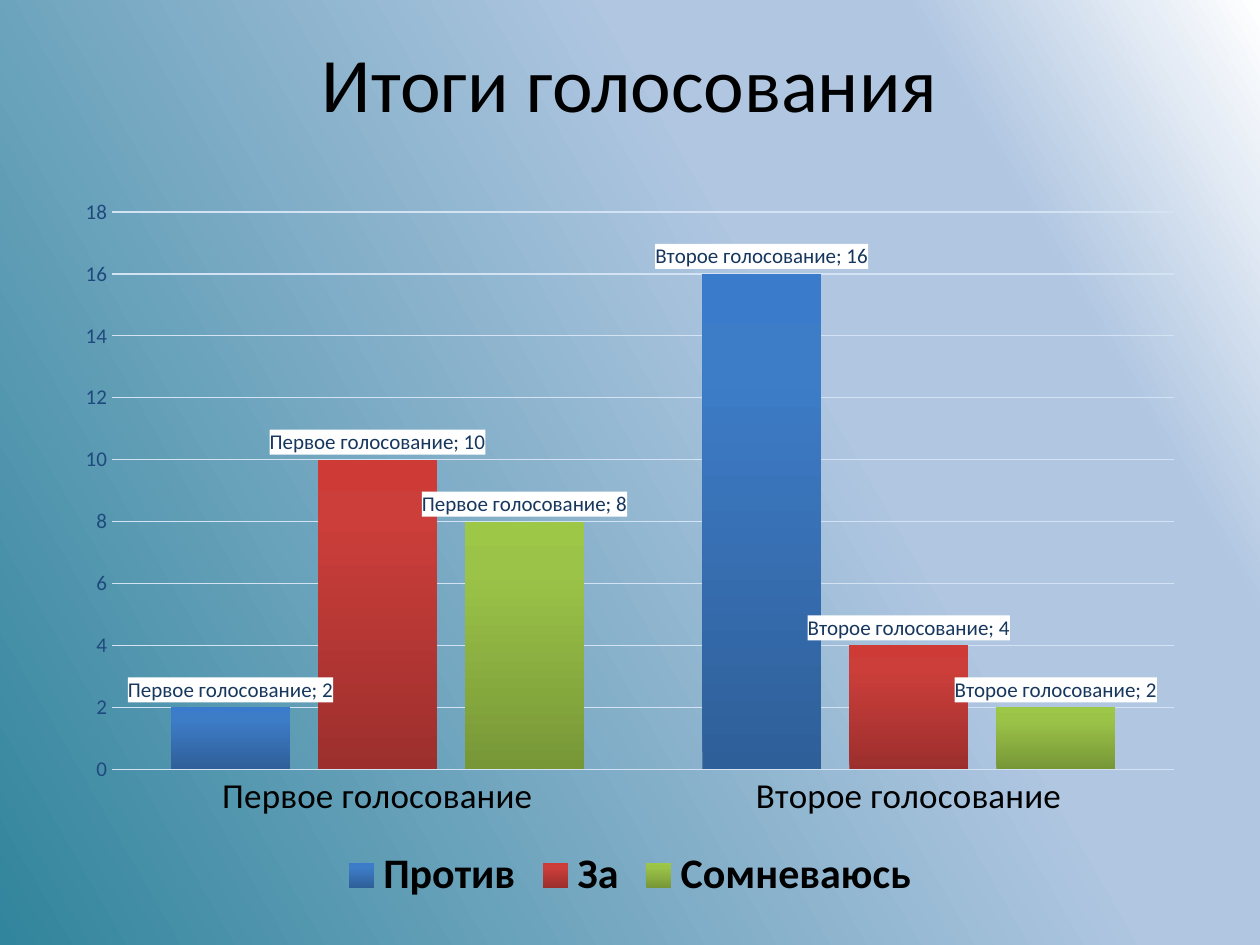
import pptx
import pptx.chart.data
import pptx.dml.color
import pptx.enum.chart
import pptx.enum.text
import pptx.oxml
import pptx.oxml.ns
import pptx.util
from dataclasses import dataclass
from lxml import etree

Cm = pptx.util.Cm
Pt = pptx.util.Pt
qn = pptx.oxml.ns.qn


@dataclass(frozen=True)
class Theme:
    font: str = "Calibri"
    ink: str = "000000"
    scale_ink: str = "1F497D"
    label_ink: str = "17375E"
    label_back: str = "FFFFFF"
    rule: str = "D4E3F4"
    rule_width: float = 0.75
    title_size: int = 44
    legend_size: int = 24
    category_size: int = 20
    small_size: int = 12
    base_size: int = 10
    backdrop: tuple = ((0, "FFFFFF"), (20, "B0C6E1"), (36, "B0C6E1"), (100, "31859C"))
    bars: tuple = (
        ((0, "2F5F99"), (80, "3D7CC7"), (100, "3A7CCB")),
        ((0, "9C2F2D"), (80, "CB3E3A"), (100, "CE3B37")),
        ((0, "779737"), (80, "9BC348"), (100, "9DC746")),
    )


def rgb(value):
    return pptx.dml.color.RGBColor.from_string(value)


def set_font(font, theme, size, color, bold=False):
    font.name = theme.font
    font.size = Pt(size)
    font.bold = bold
    font.color.rgb = rgb(color)


def write(frame, text, *, theme, size, color, bold=False, align=None, anchor=None):
    frame.word_wrap = True
    frame.vertical_anchor = anchor
    paragraph = frame.paragraphs[0]
    paragraph.alignment = align
    run = paragraph.add_run()
    run.text = text
    set_font(run.font, theme, size, color, bold)


def apply_gradient(fill, owner, stops, clockwise_angle):
    fill.gradient()
    fill.gradient_angle = 360 - clockwise_angle
    stop_list = owner.find(".//" + qn("a:gsLst"))
    for old_stop in list(stop_list):
        stop_list.remove(old_stop)
    for percent, color in stops:
        stop = etree.SubElement(stop_list, qn("a:gs"), pos=str(percent * 1000))
        etree.SubElement(stop, qn("a:srgbClr"), val=color)


class SlideBuilder:
    def __init__(self, slide, theme):
        self.slide = slide
        self.theme = theme

    def background(self):
        apply_gradient(self.slide.background.fill, self.slide.element, self.theme.backdrop, 150)

    def title(self, text, left, top, width, height):
        heading = self.slide.shapes.title
        heading.left, heading.top = left, top
        heading.width, heading.height = width, height
        write(heading.text_frame, text, theme=self.theme,
              size=self.theme.title_size, color=self.theme.ink,
              align=pptx.enum.text.PP_ALIGN.CENTER,
              anchor=pptx.enum.text.MSO_ANCHOR.MIDDLE)

    def column_chart(self, categories, votes, left, top, width, height):
        theme = self.theme
        results = pptx.chart.data.CategoryChartData()
        results.categories = categories
        for answer, counts in votes.items():
            results.add_series(answer, counts)
        chart = self.slide.shapes.add_chart(
            pptx.enum.chart.XL_CHART_TYPE.COLUMN_CLUSTERED,
            left, top, width, height, results).chart
        chart.has_title = False
        set_font(chart.font, theme, theme.base_size, theme.ink)
        chart.has_legend = True
        chart.legend.position = pptx.enum.chart.XL_LEGEND_POSITION.BOTTOM
        chart.legend.include_in_layout = False
        set_font(chart.legend.font, theme, theme.legend_size, theme.ink, bold=True)
        self.axes(chart)
        plot = chart.plots[0]
        plot.gap_width = 100
        plot.overlap = -24
        plot.vary_by_categories = False
        series_parts = chart.element.iter(qn("c:ser"))
        for series, part, stops in zip(plot.series, series_parts, theme.bars):
            apply_gradient(series.format.fill, part, stops, 270)
            series.invert_if_negative = False
            self.labels(series, part)

    def axes(self, chart):
        theme = self.theme
        categories, scale = chart.category_axis, chart.value_axis
        for axis, size, color in (
            (categories, theme.category_size, theme.ink),
            (scale, theme.small_size, theme.scale_ink),
        ):
            axis.major_tick_mark = pptx.enum.chart.XL_TICK_MARK.NONE
            axis.minor_tick_mark = pptx.enum.chart.XL_TICK_MARK.NONE
            set_font(axis.tick_labels.font, theme, size, color)
        scale.minimum_scale, scale.maximum_scale, scale.major_unit = 0, 18, 2
        scale.has_major_gridlines = True
        scale.format.line.fill.background()
        for line in (categories.format.line, scale.major_gridlines.format.line):
            line.color.rgb = rgb(theme.rule)
            line.width = Pt(theme.rule_width)

    def labels(self, series, part):
        theme = self.theme
        labels = series.data_labels
        labels.show_value = True
        labels.show_category_name = True
        labels.position = pptx.enum.chart.XL_LABEL_POSITION.OUTSIDE_END
        set_font(labels.font, theme, theme.small_size, theme.label_ink)
        label_part = part.find(qn("c:dLbls"))
        text_part = label_part.find(qn("c:txPr"))
        text_part.find(qn("a:bodyPr")).set("wrap", "none")
        plate = etree.Element(qn("c:spPr"))
        fill = etree.SubElement(plate, qn("a:solidFill"))
        etree.SubElement(fill, qn("a:srgbClr"), val=theme.label_back)
        text_part.addprevious(plate)
        separator = etree.Element(qn("c:separator"))
        separator.text = "; "
        label_part.find(qn("c:showBubbleSize")).addnext(separator)


def main():
    deck = pptx.Presentation()
    deck.slide_width, deck.slide_height = Cm(25.4), Cm(19.05)
    builder = SlideBuilder(deck.slides.add_slide(deck.slide_layouts[5]), Theme())
    margin, content_width = Cm(1.27), Cm(22.86)
    builder.background()
    builder.title("Итоги голосования", margin, Cm(0.05), content_width, Cm(3.18))
    builder.column_chart(
        ("Первое голосование", "Второе голосование"),
        {"Против": (2, 16), "За": (10, 4), "Сомневаюсь": (8, 2)},
        margin, Cm(3.73), content_width, Cm(14.6))
    deck.save("out.pptx")


if __name__ == "__main__":
    main()
